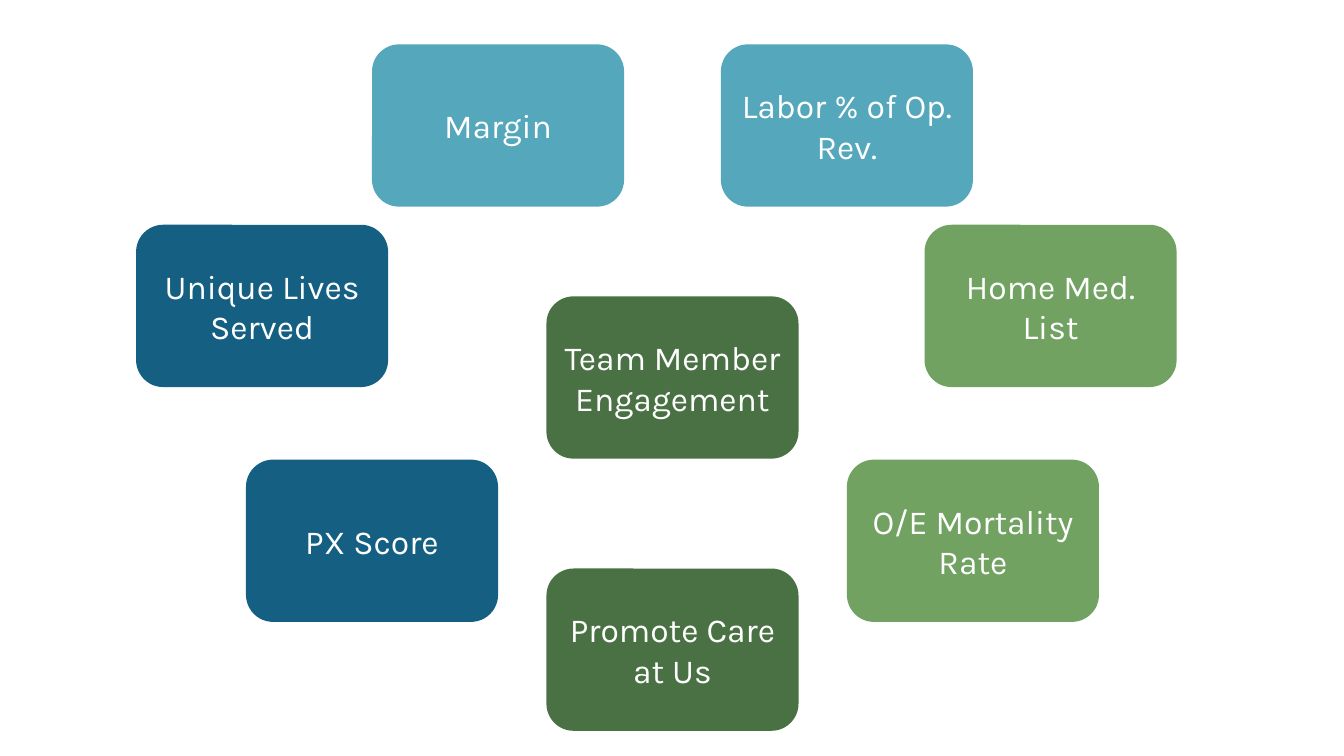
from pptx import Presentation
from pptx.dml.color import RGBColor
from pptx.enum.shapes import MSO_SHAPE
from pptx.enum.text import MSO_ANCHOR, PP_ALIGN
from pptx.util import Inches, Pt

ROUNDED = MSO_SHAPE.ROUNDED_RECTANGLE
MIDDLE = MSO_ANCHOR.MIDDLE
CENTER = PP_ALIGN.CENTER

# Content: one colour per group, then each measure with its left and top
GROUPS = [
    ("156082", [("Unique Lives Served", 1.35, 2.23),
                ("PX Score", 2.44, 4.56)]),
    ("55A7BB", [("Margin", 3.69, 0.44),
                ("Labor % of Op. Rev.", 7.15, 0.44)]),
    ("71A261", [("Home Med. List", 9.17, 2.23),
                ("O/E Mortality Rate", 8.4, 4.56)]),
    ("4A7144", [("Team Member Engagement", 5.42, 2.94),
                ("Promote Care at Us", 5.42, 5.64)]),
]
CARD_W, CARD_H = 2.5, 1.61
FONT, SIZE, TEXT_COLOR = "Karla", 24, "FFFFFF"


def rgb(value):
    return RGBColor.from_string(value)


def add_card(s, text, left, top, color):
    sp = s.shapes.add_shape(ROUNDED, Inches(left), Inches(top),
                            Inches(CARD_W), Inches(CARD_H))
    sp.shadow.inherit = False
    sp.fill.solid()
    sp.fill.fore_color.rgb = rgb(color)
    sp.line.fill.background()

    tf = sp.text_frame
    tf.word_wrap = True
    tf.vertical_anchor = MIDDLE
    p = tf.paragraphs[0]
    p.alignment = CENTER
    r = p.add_run()
    r.text = text
    r.font.name = FONT
    r.font.size = Pt(SIZE)
    r.font.color.rgb = rgb(TEXT_COLOR)


def main():
    prs = Presentation()
    prs.slide_width, prs.slide_height = Inches(13.33), Inches(7.5)
    s = prs.slides.add_slide(prs.slide_layouts[6])

    # Measure cards
    for color, cards in GROUPS:
        for text, left, top in cards:
            add_card(s, text, left, top, color)

    prs.save("out.pptx")


if __name__ == "__main__":
    main()
